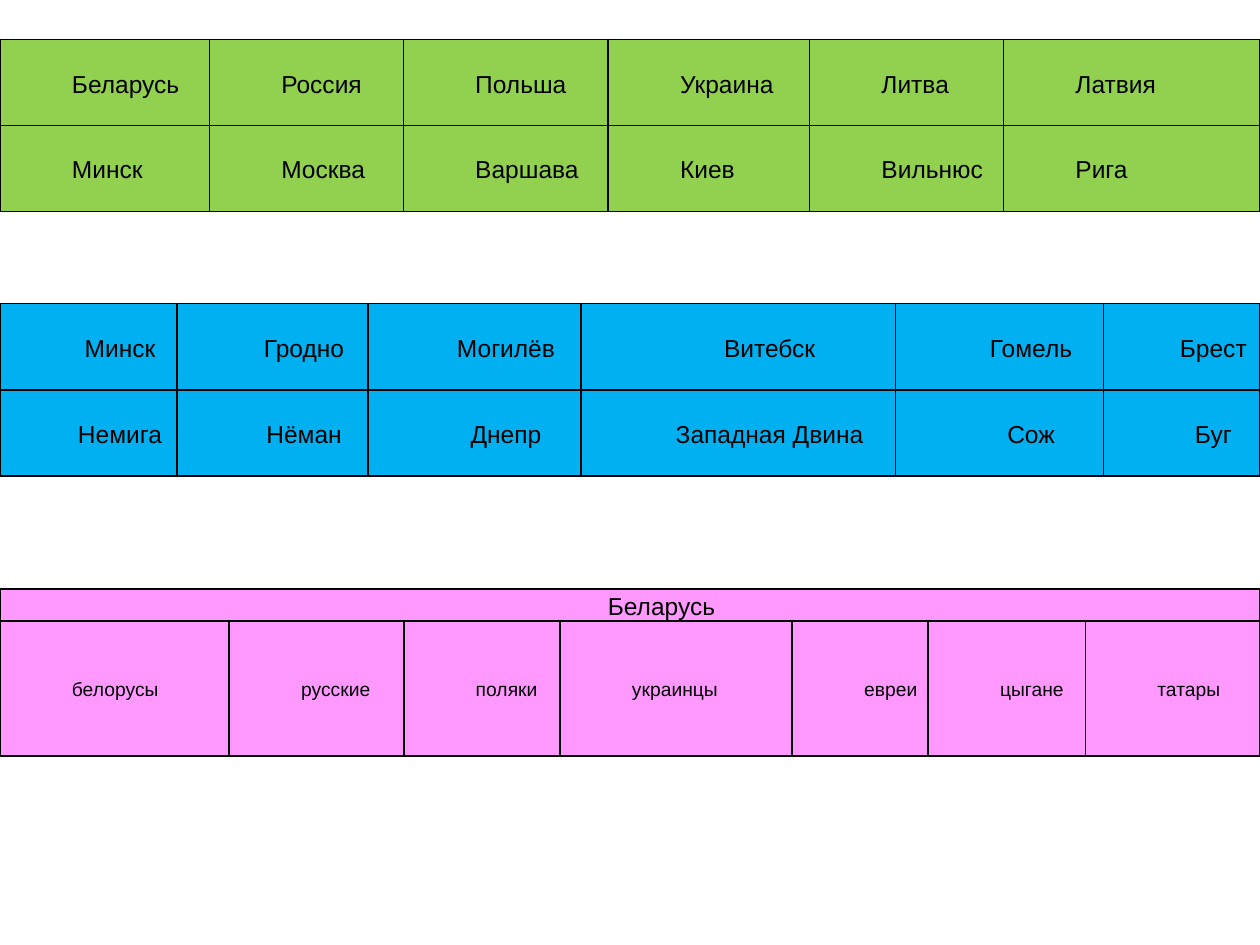
from lxml.etree import SubElement
from pptx import Presentation
from pptx.dml.color import RGBColor
from pptx.enum.text import MSO_ANCHOR, PP_ALIGN
from pptx.oxml.ns import qn
from pptx.util import Cm, Pt

COLORS = {"green": "92D050", "blue": "00B0F0", "pink": "FF99FF", "black": "000000"}
MARGINS = {"margin_left": Cm(0.18), "margin_right": Cm(0.18), "margin_top": 0, "margin_bottom": 0}
TABLES = [
    {"top": 0.8, "fill": "green", "align": PP_ALIGN.JUSTIFY,
     "cols": [4.22, 3.91, 4.13, 4.06, 3.91, 5.17], "rows": [1.73, 1.73], "sizes": [14, 14],
     "text": [["Беларусь", "Россия", "Польша", "Украина", "Литва", "Латвия"],
              ["Минск", "Москва", "Варшава", "Киев", "Вильнюс", "Рига"]]},
    {"top": 6.12, "fill": "blue", "align": PP_ALIGN.CENTER,
     "cols": [3.57, 3.85, 4.29, 6.34, 4.2, 3.15], "rows": [1.74, 1.74], "sizes": [14, 14],
     "text": [["Минск", "Гродно", "Могилёв", "Витебск", "Гомель", "Брест"],
              ["Немига", "Нёман", "Днепр", "Западная Двина", "Сож", "Буг"]]},
    {"top": 11.87, "fill": "pink", "align": PP_ALIGN.LEFT,
     "cols": [4.62, 3.52, 3.15, 4.68, 2.74, 3.17, 3.52], "rows": [0.65, 2.72], "sizes": [14, 11],
     "text": [["Беларусь"],
              ["белорусы", "русские", "поляки", "украинцы", "евреи", "цыгане", "татары"]]},
]


def add_borders(cell):
    tcPr = cell._tc.get_or_add_tcPr()
    for side in ("lnL", "lnR", "lnT", "lnB"):
        ln = SubElement(tcPr, qn(f"a:{side}"), w=str(Pt(1)))
        fill = SubElement(ln, qn("a:solidFill"))
        SubElement(fill, qn("a:srgbClr"), val=COLORS["black"])


def write_text(cell, text, size, align):
    p = cell.text_frame.paragraphs[0]
    p.alignment = align
    p.line_spacing = 1.15
    pPr = p._p.get_or_add_pPr()
    pPr.set("marL", str(Cm(1.27)))
    pPr.set("indent", "0")
    r = p.add_run()
    r.text = text
    for key, value in {"size": Pt(size), "name": "Arial", "bold": False}.items():
        setattr(r.font, key, value)
    r.font.color.rgb = RGBColor.from_string(COLORS["black"])


prs = Presentation()
prs.slide_width = Cm(25.4)
prs.slide_height = Cm(19.05)
s = prs.slides.add_slide(prs.slide_layouts[6])

for data in TABLES:
    cols, rows = data["cols"], data["rows"]
    sp = s.shapes.add_table(len(rows), len(cols), 0, Cm(data["top"]),
                            Cm(sum(cols)), Cm(sum(rows)))
    table = sp.table
    table.first_row = False
    table.horz_banding = False
    for column, width in zip(table.columns, cols):
        column.width = Cm(width)
    for row, height in zip(table.rows, rows):
        row.height = Cm(height)
    for cell in table.iter_cells():
        add_borders(cell)
        cell.fill.solid()
        cell.fill.fore_color.rgb = RGBColor.from_string(COLORS[data["fill"]])
        cell.vertical_anchor = MSO_ANCHOR.MIDDLE
        for key, value in MARGINS.items():
            setattr(cell, key, value)
    for i, (words, size) in enumerate(zip(data["text"], data["sizes"])):
        is_header = len(words) == 1
        if is_header:
            table.cell(i, 0).merge(table.cell(i, len(cols) - 1))
        align = PP_ALIGN.CENTER if is_header else data["align"]
        for j, word in enumerate(words):
            write_text(table.cell(i, j), word, size, align)

prs.save("out.pptx")
